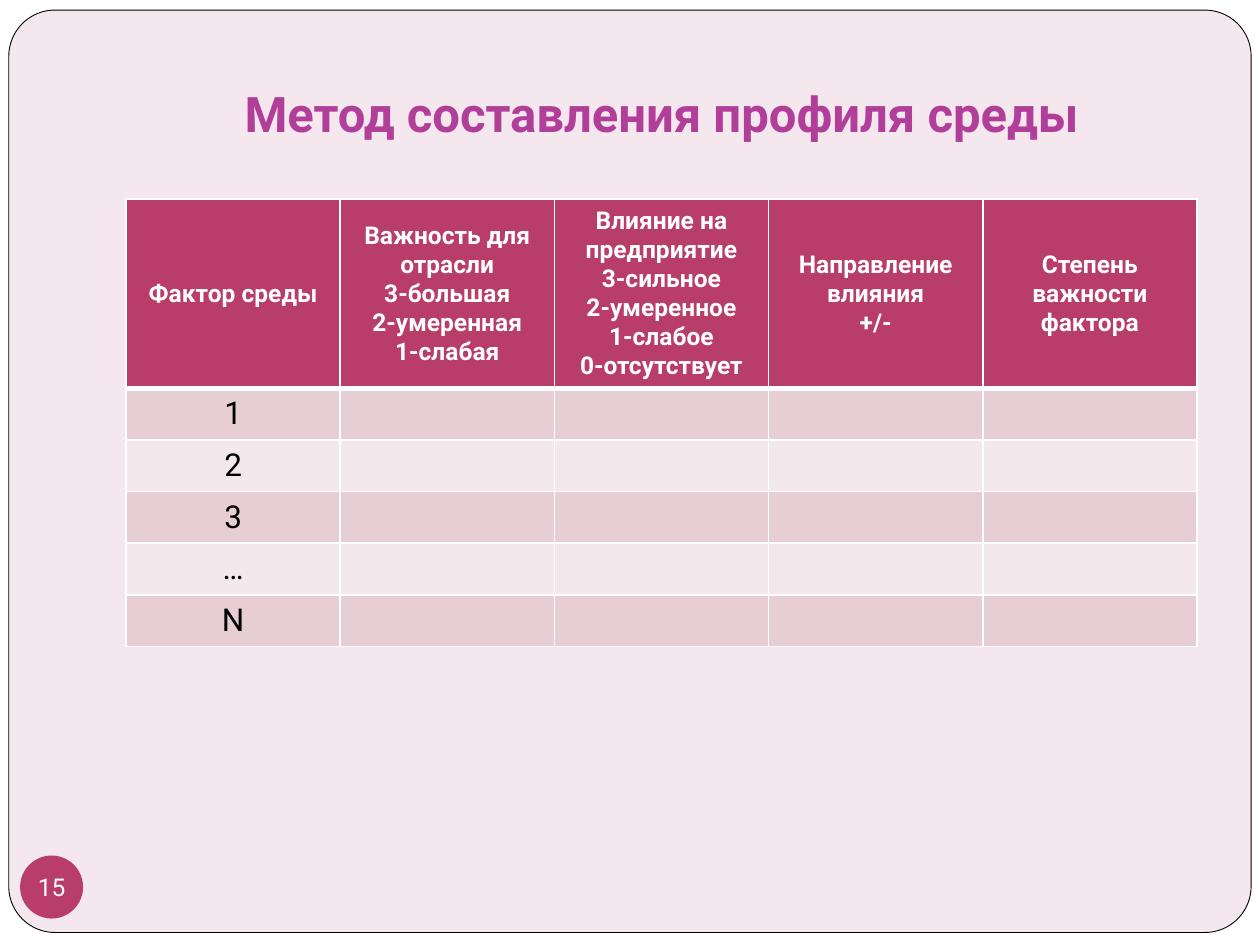
from lxml.etree import SubElement
from pptx import Presentation
from pptx.dml.color import RGBColor
from pptx.enum.shapes import MSO_SHAPE
from pptx.enum.text import MSO_ANCHOR, PP_ALIGN
from pptx.oxml.ns import qn
from pptx.util import Inches, Pt

WIDE, HIGH = Inches(10), Inches(7.5)
HUES = {
    "white": "FFFFFF", "black": "000000", "page": "F4E7ED", "title": "B13F9A",
    "rose": "B83D68", "dark": "E6CED4", "light": "F3E8EB",
}
HEAD = [
    ["Фактор среды"],
    ["Важность для отрасли", "3-большая", "2-умеренная", "1-слабая"],
    ["Влияние на предприятие", "3-сильное", "2-умеренное", "1-слабое",
     "0-отсутствует"],
    ["Направление влияния", "+/-"],
    ["Степень важности фактора"],
]
ROWS = ["1", "2", "3", "…", "N"]


def hue(name):
    return RGBColor.from_string(HUES[name])


def share(x, y, w, h):
    """Turn percentages of the slide into a box of lengths."""
    return [int(part * side / 100)
            for part, side in zip((x, y, w, h), (WIDE, HIGH, WIDE, HIGH))]


def write(frame, lines, size, tint, bold=False):
    look = {"name": "Roboto", "size": Pt(size), "bold": bold}
    for i, line in enumerate(lines):
        para = frame.paragraphs[0] if i == 0 else frame.add_paragraph()
        para.alignment = PP_ALIGN.CENTER
        run = para.add_run()
        run.text = line
        for key, value in look.items():
            setattr(run.font, key, value)
        run.font.color.rgb = hue(tint)


def inset(frame, sides, wrap):
    form = {"word_wrap": wrap, "vertical_anchor": MSO_ANCHOR.MIDDLE}
    names = ("margin_left", "margin_top", "margin_right", "margin_bottom")
    form.update(zip(names, map(Inches, sides)))
    for key, value in form.items():
        setattr(frame, key, value)


def plate(slide, kind, box, fill, line=None):
    shape = slide.shapes.add_shape(kind, *box)
    shape.shadow.inherit = False
    shape.fill.solid()
    shape.fill.fore_color.rgb = hue(fill)
    if line:
        shape.line.color.rgb = hue(line)
        shape.line.width = Pt(0.5)
    else:
        shape.line.fill.background()
    return shape


def edge(cell, top, foot):
    """Draw the four white borders, widths in points."""
    props = cell._tc.get_or_add_tcPr()
    for tag, wide in (("lnL", 1), ("lnR", 1), ("lnT", top), ("lnB", foot)):
        line = SubElement(props, qn("a:" + tag), w=str(Pt(wide)))
        fill = SubElement(line, qn("a:solidFill"))
        SubElement(fill, qn("a:srgbClr"), val=HUES["white"])


def paint(cell, fill, top=1, foot=1):
    edge(cell, top, foot)
    cell.fill.solid()
    cell.fill.fore_color.rgb = hue(fill)
    cell.vertical_anchor = MSO_ANCHOR.MIDDLE


def frame_page(slide, box):
    slide.background.fill.solid()
    slide.background.fill.fore_color.rgb = hue("page")
    plate(slide, MSO_SHAPE.RECTANGLE, share(0, 0, 100, 100), "white")
    card = plate(slide, MSO_SHAPE.ROUNDED_RECTANGLE, box, "page", "black")
    card.adjustments[0] = 0.05


def add_title(slide, box):
    frame = slide.shapes.add_textbox(*box).text_frame
    inset(frame, (0.1, 0.05, 0.1, 0.1), True)
    write(frame, ["Метод составления профиля среды"], 28, "title", True)


def add_badge(slide, box):
    frame = plate(slide, MSO_SHAPE.OVAL, box, "rose").text_frame
    inset(frame, (0, 0, 0, 0), False)
    write(frame, ["15"], 14, "white")


def add_grid(slide, box):
    table = slide.shapes.add_table(len(ROWS) + 1, len(HEAD), *box).table
    # The head takes what the equal body rows leave
    body = Inches(0.41)
    for i, row in enumerate(table.rows):
        row.height = body if i else box[3] - body * len(ROWS)
    # Head
    for i, lines in enumerate(HEAD):
        cell = table.cell(0, i)
        paint(cell, "rose", foot=3)
        write(cell.text_frame, lines, 14, "white", True)
    # Body, in bands
    for r, label in enumerate(ROWS, 1):
        for c in range(len(HEAD)):
            paint(table.cell(r, c), "dark" if r % 2 else "light",
                  top=3 if r == 1 else 1)
        write(table.cell(r, 0).text_frame, [label], 18, "black")


def main():
    deck = Presentation()
    deck.slide_width, deck.slide_height = WIDE, HIGH
    slide = deck.slides.add_slide(deck.slide_layouts[6])
    frame_page(slide, share(0.7, 1.07, 98.6, 97.6))
    add_title(slide, share(10, 4, 85, 16.67))
    add_badge(slide, share(1.6, 90.53, 5, 6.67))
    add_grid(slide, share(10, 21.07, 85, 47.07))
    deck.save("out.pptx")


if __name__ == "__main__":
    main()
